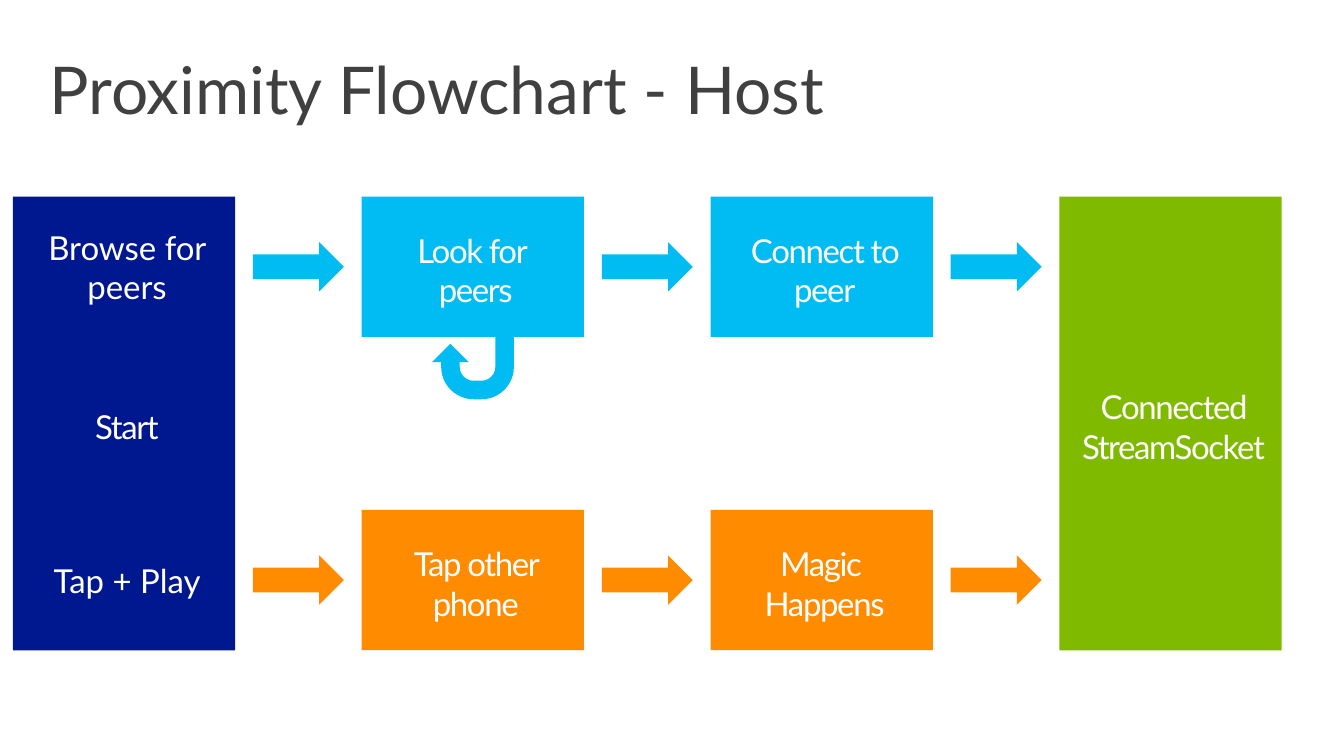
from pptx import Presentation
from pptx.dml.color import RGBColor
from pptx.enum.shapes import MSO_SHAPE
from pptx.enum.text import MSO_ANCHOR, MSO_AUTO_SIZE, PP_ALIGN
from pptx.util import Inches, Pt

RECT, ARROW, UTURN = MSO_SHAPE.RECTANGLE, MSO_SHAPE.RIGHT_ARROW, MSO_SHAPE.U_TURN_ARROW
TOP, MIDDLE = MSO_ANCHOR.TOP, MSO_ANCHOR.MIDDLE
NO_FIT, GROW = MSO_AUTO_SIZE.NONE, MSO_AUTO_SIZE.SHAPE_TO_FIT_TEXT
LEFT, CENTER = PP_ALIGN.LEFT, PP_ALIGN.CENTER

COLORS = {"title": "404040", "text": "FFFFFF", "start": "00188F",
          "browse": "00BCF2", "tap": "FF8C00", "connected": "7FBA00"}

# Grid of four columns and two rows, in inches
COLUMNS = [0.13 + 3.53 * column for column in range(4)]
ROWS = {"browse": 1.99, "tap": 5.16}
STEP_W, STEP_H = 2.25, 1.42
TALL_H = ROWS["tap"] + STEP_H - ROWS["browse"]
ARROW_W, ARROW_H = 0.92, 0.5
ARROW_GAP = (COLUMNS[1] - COLUMNS[0] - STEP_W - ARROW_W) / 2

FRAME_FORMATS = {
    "title": {"vertical_anchor": TOP, "auto_size": NO_FIT,
              "margin_left": Inches(0.2), "margin_right": Inches(0.2),
              "margin_top": Inches(0.16), "margin_bottom": Inches(0.16)},
    "step": {"vertical_anchor": MIDDLE, "word_wrap": True,
             "margin_left": Inches(0.1), "margin_right": Inches(0.04),
             "margin_top": Inches(0.1), "margin_bottom": Inches(0.04)},
    "label": {"vertical_anchor": TOP, "word_wrap": True, "auto_size": GROW},
}


def write(frame, text, style, size=24, color="text", align=CENTER, spacing=0):
    frame.text = text
    for name, value in FRAME_FORMATS[style].items():
        setattr(frame, name, value)
    for paragraph in frame.paragraphs:
        paragraph.alignment = align
        for run in paragraph.runs:
            run.font.name, run.font.size = "Lato", Pt(size)
            run.font.color.rgb = RGBColor.from_string(COLORS[color])
            if spacing:
                run.font._element.set("spc", str(spacing))


def add_block(kind, color, *box):
    block = slide.shapes.add_shape(kind, *map(Inches, box))
    block.shadow.inherit = False
    block.fill.solid()
    block.fill.fore_color.rgb = RGBColor.from_string(COLORS[color])
    block.line.fill.background()
    return block


prs = Presentation()
prs.slide_width, prs.slide_height = Inches(13.6), Inches(7.65)
slide = prs.slides.add_slide(prs.slide_layouts[5])

# Title
title = slide.shapes.title
title.left, title.top, title.width, title.height = map(Inches, (0.3, 0.33, 13, 1))
write(title.text_frame, "Proximity Flowchart - Host", "title", 48, "title", LEFT)

# Steps: color, column, row, height, text
steps = [
    ("start", 0, "browse", TALL_H, "Start"),
    ("browse", 1, "browse", STEP_H, "Look for \npeers"),
    ("browse", 2, "browse", STEP_H, "Connect to peer"),
    ("tap", 1, "tap", STEP_H, "Tap other phone"),
    ("tap", 2, "tap", STEP_H, "Magic \nHappens"),
    ("connected", 3, "browse", TALL_H, "Connected StreamSocket"),
]
for color, column, row, height, text in steps:
    step = add_block(RECT, color, COLUMNS[column], ROWS[row], STEP_W, height)
    write(step.text_frame, text, "step", spacing=-100)

# Arrows between the columns
for row, top in ROWS.items():
    for left in COLUMNS[:3]:
        add_block(ARROW, row, left + STEP_W + ARROW_GAP,
                  top + (STEP_H - ARROW_H) / 2, ARROW_W, ARROW_H)

# Loop back to looking for peers
retry = add_block(UTURN, "browse", 4.37, 3.29, 0.83, 0.75)
retry.rotation = 180

# Entry points on the start block
for text, top, height in [("Browse for peers", 2.25, 0.91), ("Tap + Play", 5.62, 0.5)]:
    entry = slide.shapes.add_textbox(*map(Inches, (0.29, top, 1.99, height)))
    write(entry.text_frame, text, "label")

prs.save("out.pptx")
